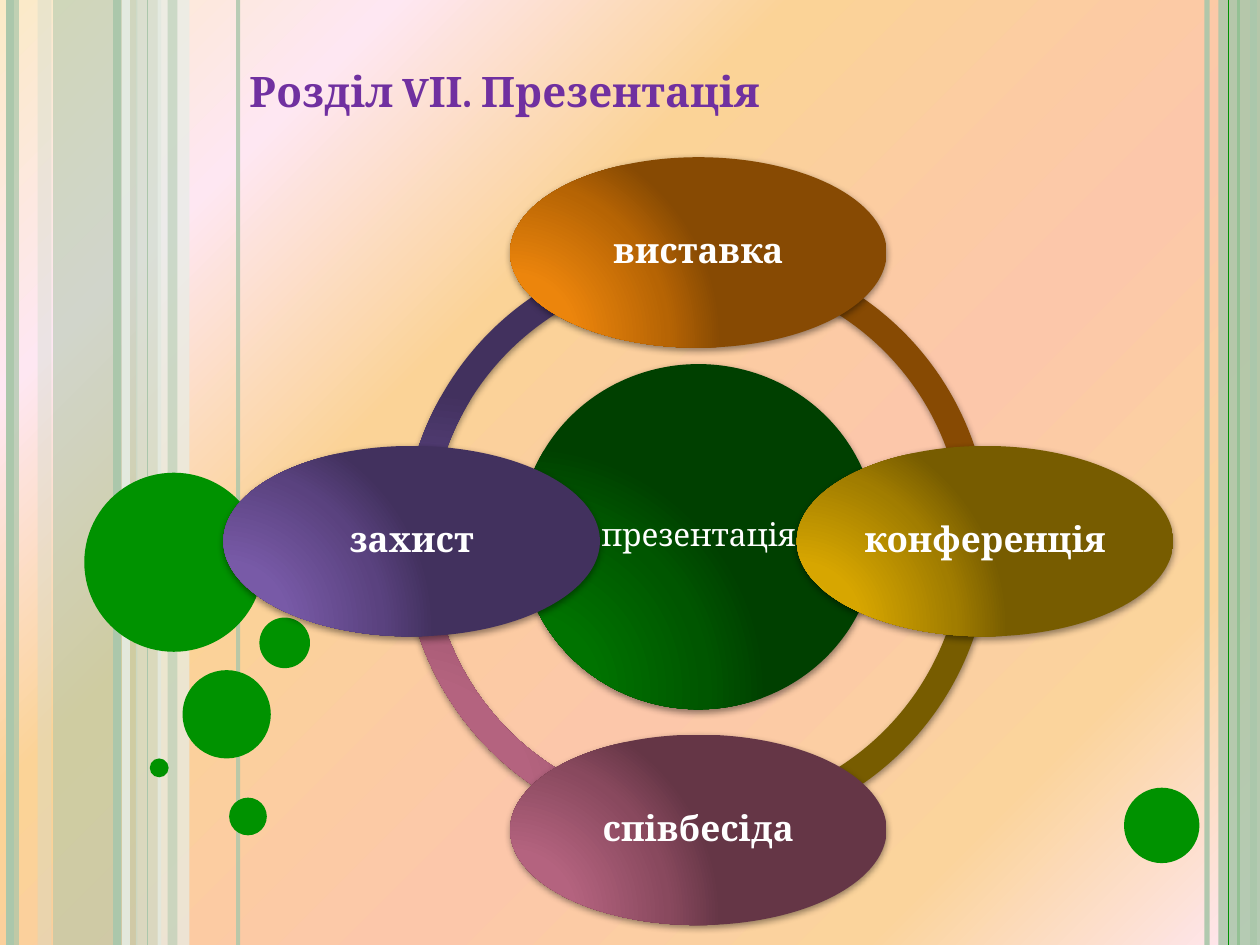
from typing import NamedTuple

from lxml import etree
from pptx import Presentation
from pptx.dml.color import RGBColor
from pptx.enum.shapes import MSO_CONNECTOR, MSO_SHAPE
from pptx.enum.text import MSO_ANCHOR, PP_ALIGN
from pptx.oxml.ns import qn
from pptx.util import Cm, Pt

RECTANGLE, OVAL, ARC = MSO_SHAPE.RECTANGLE, MSO_SHAPE.OVAL, MSO_SHAPE.BLOCK_ARC
STRAIGHT = MSO_CONNECTOR.STRAIGHT
TOP, MIDDLE = MSO_ANCHOR.TOP, MSO_ANCHOR.MIDDLE
LEFT, CENTER = PP_ALIGN.LEFT, PP_ALIGN.CENTER

FONT = "Cambria"
WHITE, PURPLE, GREEN = "FFFFFF", "7030A0", "009200"
SAGE, PALE, MIST = "ABC7AB", "CCDCCC", "E7EEE7"
PAGE_WIDTH, PAGE_HEIGHT = 25.4, 19.05

# Gradients as (position in percent, colour)
BACKGROUND = [(0, "FBEAC7"), (18, "FEE7F2"), (36, "FBD397"),
              (61, "FCC7AA"), (82, "FBD49C"), (100, "FEE7F2")]


def glow(*colors: str) -> list:
    return list(zip((0, 30, 75, 100), colors))


DARK_GREEN = glow("007700", "007300", "005600", "004000")
ORANGE = glow("F58A0C", "EC850C", "B66404", "874A03")
GOLD = glow("DEAC00", "D7A600", "A17D00", "775C00")
ROSE = glow("BB6783", "B4637F", "89495E", "653646")
VIOLET = glow("7C5DAD", "785AA7", "5A427F", "42315E")


class Stripe(NamedTuple):
    """Vertical line; x in cm, weight in points."""
    x: float
    weight: float
    color: str = SAGE
    opacity: int = 100


class Band(NamedTuple):
    """Vertical strip over the full height, in cm."""
    left: float
    width: float
    color: str
    opacity: int


class Bubble(NamedTuple):
    left: float
    top: float
    size: float


class Arc(NamedTuple):
    left: float
    start: float
    end: float
    stops: list


class Petal(NamedTuple):
    text: str
    step_x: int
    step_y: int
    stops: list


DECORATION = [
    Stripe(24.33, 3, opacity=93), Stripe(0.2, 4.5), Stripe(24.97, 1.5, GREEN),
    Band(24.56, 0.84, SAGE, 87), Stripe(24.77, 0.75, GREEN),
    Bubble(22.66, 15.88, 1.52),
    Band(1.07, 1.7, SAGE, 54), Band(0.76, 0.28, PALE, 36),
    Band(2.74, 0.51, PALE, 70), Band(3.18, 0.64, MIST, 71),
    Stripe(0.3, 4.5, opacity=73), Stripe(2.54, 4.5, MIST, 83),
    Stripe(2.36, 4.5), Stripe(4.8, 2.25, opacity=82), Stripe(2.97, 0.75),
    Band(3.38, 0.2, SAGE, 51),
    Bubble(1.7, 9.53, 3.61), Bubble(3.68, 13.51, 1.78),
    Bubble(3.02, 15.29, 0.38), Bubble(4.62, 16.08, 0.76),
    Bubble(5.23, 12.45, 1.02), Stripe(25.27, 4.5),
]
ARCS = [Arc(8.13, 108, 162, VIOLET), Arc(8.13, 54, 108, ROSE),
        Arc(8.05, 0.08, 53.49, GOLD), Arc(8.05, 162.51, 0.09, ORANGE)]
PETALS = [Petal("виставка", 0, -1, ORANGE), Petal("конференція", 1, 0, GOLD),
          Petal("співбесіда", 0, 1, ROSE), Petal("захист", -1, 0, VIOLET)]
HUB_X, HUB_Y, ORBIT_X, ORBIT_Y = 14.08, 10.91, 5.78, 5.82


def rgb(color: str) -> RGBColor:
    return RGBColor.from_string(color)


def add_child(parent, tag: str, **attributes):
    return etree.SubElement(parent, qn(tag),
                            {name: str(value) for name, value in attributes.items()})


def set_opacity(element, opacity: int) -> None:
    if opacity < 100:
        color = next(element.iter(qn("a:srgbClr")))
        add_child(color, "a:alpha", val=opacity * 1000)


def set_gradient(fill, element, stops: list, radial: bool) -> None:
    fill.gradient()
    gradient = next(element.iter(qn("a:gradFill")))
    for child in list(gradient):
        gradient.remove(child)
    stop_list = add_child(gradient, "a:gsLst")
    for position, color in stops:
        stop = add_child(stop_list, "a:gs", pos=position * 1000)
        add_child(stop, "a:srgbClr", val=color)
    if radial:
        circle = add_child(gradient, "a:path", path="circle")
        add_child(circle, "a:fillToRect", l=5000, t=100000, r=120000, b=10000)
    else:
        add_child(gradient, "a:lin", ang=45 * 60000, scaled=0)


def add_form(page, kind, left: float, top: float, width: float, height: float):
    form = page.shapes.add_shape(kind, Cm(left), Cm(top), Cm(width), Cm(height))
    form.shadow.inherit = False
    form.line.fill.background()
    return form


def add_flat(page, kind, left, top, width, height, color: str, opacity: int = 100) -> None:
    form = add_form(page, kind, left, top, width, height)
    form.fill.solid()
    form.fill.fore_color.rgb = rgb(color)
    set_opacity(form.fill._xPr, opacity)


def add_shaded(page, kind, left, top, width, height, stops: list):
    form = add_form(page, kind, left, top, width, height)
    properties = form._element.spPr
    set_gradient(form.fill, properties, stops, radial=True)
    effects = properties.find(qn("a:effectLst"))
    shadow = add_child(effects, "a:outerShdw", blurRad=Pt(4), dist=Pt(1.6),
                       dir=90 * 60000, rotWithShape=0)
    set_color = add_child(shadow, "a:srgbClr", val="000000")
    add_child(set_color, "a:alpha", val=42000)
    return form


def add_stripe(page, stripe: Stripe) -> None:
    line = page.shapes.add_connector(STRAIGHT, Cm(stripe.x), 0, Cm(stripe.x), Cm(PAGE_HEIGHT))
    line.line.width = Pt(stripe.weight)
    line.line.color.rgb = rgb(stripe.color)
    set_opacity(line._element.spPr, stripe.opacity)
    add_child(line._element.spPr, "a:effectLst")


def write(box, text: str, *, size: float, color: str = WHITE, bold: bool = False,
          align=CENTER, anchor=MIDDLE, inset: float = 0.08,
          spacing: float = 0.9, before: float = 0) -> None:
    frame = box.text_frame
    frame.word_wrap = True
    frame.vertical_anchor = anchor
    frame.margin_left = frame.margin_right = Cm(inset)
    frame.margin_top = frame.margin_bottom = Cm(inset / 2 if anchor == TOP else inset)
    para = frame.paragraphs[0]
    para.alignment = align
    para.line_spacing = spacing
    para.space_before = Pt(before)
    span = para.add_run()
    span.text = text
    span.font.name = FONT
    span.font.size = Pt(size)
    span.font.bold = bold
    span.font.color.rgb = rgb(color)


def add_oval(page, text: str, x: float, y: float, width: float, height: float,
             stops: list, **style) -> None:
    oval = add_shaded(page, OVAL, x - width / 2, y - height / 2, width, height, stops)
    write(oval, text, **style)


def main() -> None:
    deck = Presentation()
    deck.slide_width, deck.slide_height = Cm(PAGE_WIDTH), Cm(PAGE_HEIGHT)
    page = deck.slides.add_slide(deck.slide_layouts[6])
    set_gradient(page.background.fill, page._element, BACKGROUND, radial=False)

    # Stripes, bands and bubbles along the edges
    for item in DECORATION:
        if isinstance(item, Stripe):
            add_stripe(page, item)
        elif isinstance(item, Band):
            add_flat(page, RECTANGLE, item.left, 0, item.width, PAGE_HEIGHT,
                     item.color, item.opacity)
        else:
            add_flat(page, OVAL, item.left, item.top, item.size, item.size, GREEN)

    # Ring of arcs
    for arc in ARCS:
        ring = add_shaded(page, ARC, arc.left, 4.95, 11.91, 11.91, arc.stops)
        for index, value in enumerate((arc.start, arc.end, 0.046)):
            ring.adjustments[index] = value

    # Hub and the four petals around it
    add_oval(page, "презентація", HUB_X, 10.82, 7.19, 6.96, DARK_GREEN, size=18)
    for petal in PETALS:
        add_oval(page, petal.text, HUB_X + petal.step_x * ORBIT_X,
                 HUB_Y + petal.step_y * ORBIT_Y, 7.59, 3.84, petal.stops,
                 size=20, bold=True)

    # Title
    title = page.shapes.add_textbox(Cm(4.78), Cm(1.19), Cm(19.46), Cm(1.78))
    write(title, "Розділ VІІ. Презентація", size=24, color=PURPLE, bold=True,
          align=LEFT, anchor=TOP, inset=0.25, spacing=1, before=6)
    deck.save("out.pptx")


if __name__ == "__main__":
    main()
